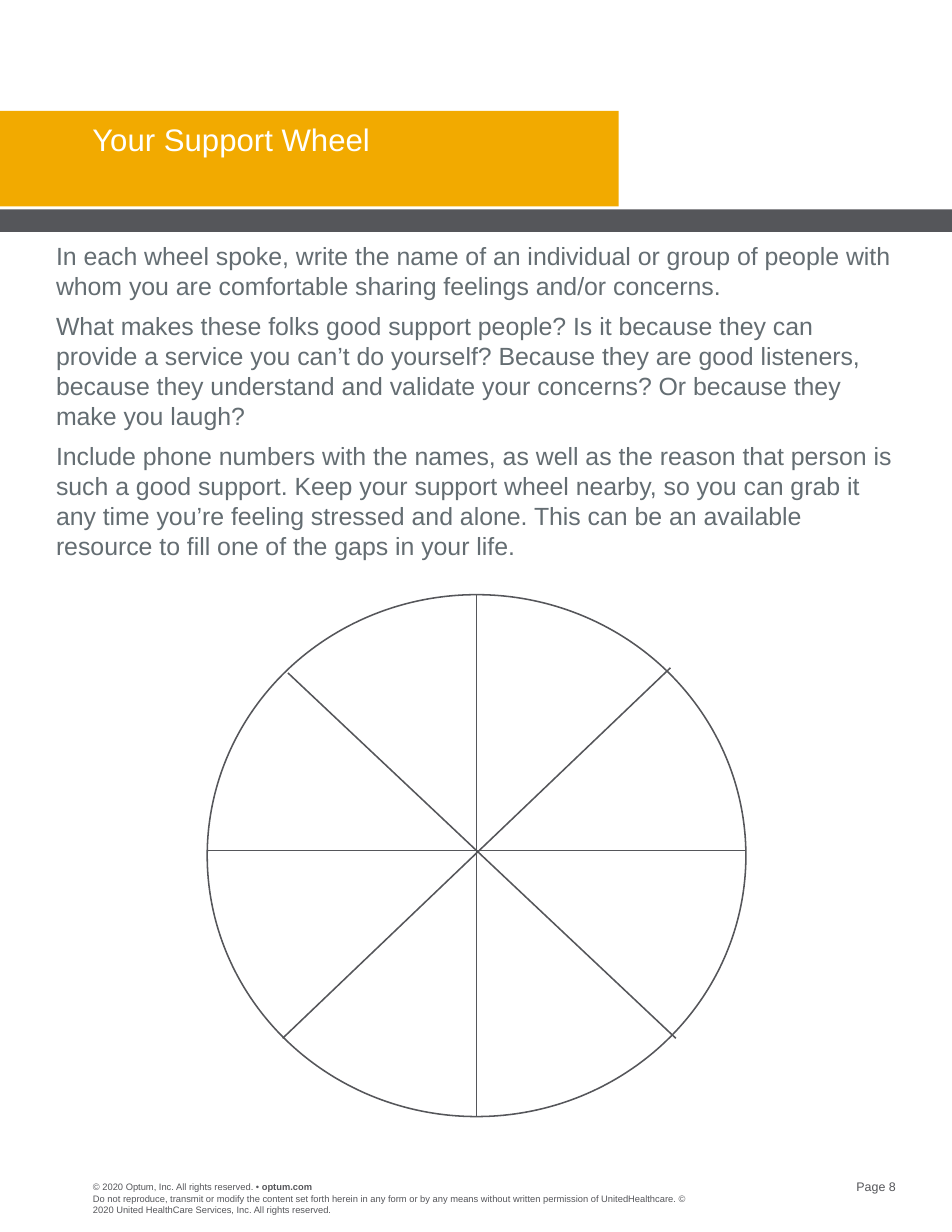
import pptx
import pptx.dml.color
import pptx.enum.shapes
import pptx.enum.text
import pptx.oxml
import pptx.util

WIDTH, HEIGHT = 8.5, 11
FONT = "Arial"
COLORS = {"band": "F2AA00", "dark": "55565A", "body": "646D72", "white": "FFFFFF"}
ALIGN = pptx.enum.text.PP_ALIGN
SHAPE = pptx.enum.shapes.MSO_SHAPE

TITLE = "Your Support Wheel"
BODY = [
    "In each wheel spoke, write the name of an individual or group of people with "
    "whom you are comfortable sharing feelings and/or concerns.",
    "What makes these folks good support people? Is it because they can provide a "
    "service you can’t do yourself? Because they are good listeners, because they "
    "understand and validate your concerns? Or because they make you laugh?",
    "Include phone numbers with the names, as well as the reason that person is such "
    "a good support. Keep your support wheel nearby, so you can grab it any time "
    "you’re feeling stressed and alone. This can be an available resource to fill "
    "one of the gaps in your life.",
]
COPYRIGHT = ("© 2020 Optum, Inc. All rights reserved. • ", "optum.com")
TERMS = (
    "Do not reproduce, transmit or modify the content set forth herein in any form or "
    "by any means without written permission of UnitedHealthcare. © 2020 United "
    "HealthCare Services, Inc. All rights reserved."
)
# Spoke ends as shares of the wheel's box: x1, y1, x2, y2
SPOKES = [
    (0.5, 0, 0.5, 1),
    (0, 0.49, 1, 0.49),
    (0.15, 0.15, 0.87, 0.85),
    (0.86, 0.14, 0.14, 0.85),
]


def rgb(name):
    return pptx.dml.color.RGBColor.from_string(COLORS[name])


def inches(*lengths):
    return [pptx.util.Inches(n) for n in lengths]


def format_text(tf, size, color, align=ALIGN.LEFT, after=0):
    tf.margin_left = tf.margin_top = tf.margin_right = tf.margin_bottom = 0
    tf.word_wrap = True
    tf.auto_size = pptx.enum.text.MSO_AUTO_SIZE.NONE
    tf.vertical_anchor = pptx.enum.text.MSO_ANCHOR.TOP
    for p in tf.paragraphs:
        p.alignment = align
        p.space_after = pptx.util.Pt(after)
        for r in p.runs:
            r.font.name = FONT
            r.font.size = pptx.util.Pt(size)
            r.font.color.rgb = rgb(color)


def add_text(s, box, text, size, color, **style):
    tf = s.shapes.add_textbox(*inches(*box)).text_frame
    tf.text = text
    format_text(tf, size, color, **style)
    return tf


def add_bar(s, box, color):
    sp = s.shapes.add_shape(SHAPE.RECTANGLE, *inches(*box))
    sp.shadow.inherit = False
    sp.fill.solid()
    sp.fill.fore_color.rgb = rgb(color)
    sp.line.fill.background()


def add_header(s, box):
    x, y, w, h = box
    add_bar(s, (x, y, 0.65 * w, 0.79 * h), "band")
    add_bar(s, (x, y + 0.815 * h, w, 0.185 * h), "dark")
    title = s.shapes.title
    title.left, title.top, title.width, title.height = inches(
        x + 0.097 * w, y + 0.11 * h, 0.53 * w, 0.565 * h)
    title.text_frame.text = TITLE
    format_text(title.text_frame, 20, "white")
    title.text_frame.paragraphs[0].line_spacing = 0.9


def add_wheel(s, box):
    x, y, w, h = box
    group = s.shapes.add_group_shape()
    rim = group.shapes.add_shape(SHAPE.OVAL, *inches(*box))
    rim.shadow.inherit = False
    rim.fill.solid()
    rim.fill.fore_color.rgb = rgb("white")
    spokes = []
    for x1, y1, x2, y2 in SPOKES:
        spoke = group.shapes.add_connector(
            pptx.enum.shapes.MSO_CONNECTOR.STRAIGHT,
            *inches(x + x1 * w, y + y1 * h, x + x2 * w, y + y2 * h))
        spokes.append(spoke)
    for sp in [rim, *spokes]:
        sp.line.color.rgb = rgb("dark")
        sp.line.width = pptx.util.Pt(1)
    for spoke in spokes:
        pptx.oxml.ns.qn("a:effectLst")
        spoke.element.spPr.append(
            pptx.oxml.parse_xml(f"<a:effectLst {pptx.oxml.ns.nsdecls('a')}/>"))


def add_footer(s, box):
    x, y, w, h = box
    tf = add_text(s, (x, y, 0.4 * w, h / 3), COPYRIGHT[0], 6, "dark")
    r = tf.paragraphs[0].add_run()
    r.text = COPYRIGHT[1]
    format_text(tf, 6, "dark")
    r.font.bold = True
    add_text(s, (x, y + h / 3, 0.74 * w, 2 * h / 3), TERMS, 6, "dark")
    add_text(s, (x + 0.89 * w, y - 0.02, 0.11 * w, 0.13), "Page 8", 8, "dark",
             align=ALIGN.RIGHT)


def main():
    prs = pptx.Presentation()
    prs.slide_width, prs.slide_height = inches(WIDTH, HEIGHT)
    s = prs.slides.add_slide(prs.slide_layouts[5])
    add_header(s, (0, 0.09 * HEIGHT, WIDTH, 1.08))
    # The title placeholder is created first, so bring it above the band
    s.shapes.title.element.getparent().append(s.shapes.title.element)
    add_text(s, (0.5, 2.15, WIDTH - 1.01, 2.89), "\n".join(BODY), 16, "body", after=6.7)
    add_wheel(s, (1.85, 5.31, 4.81, 4.66))
    add_footer(s, (0.83, 10.55, 7.17, 0.3))
    prs.save("out.pptx")


if __name__ == "__main__":
    main()
